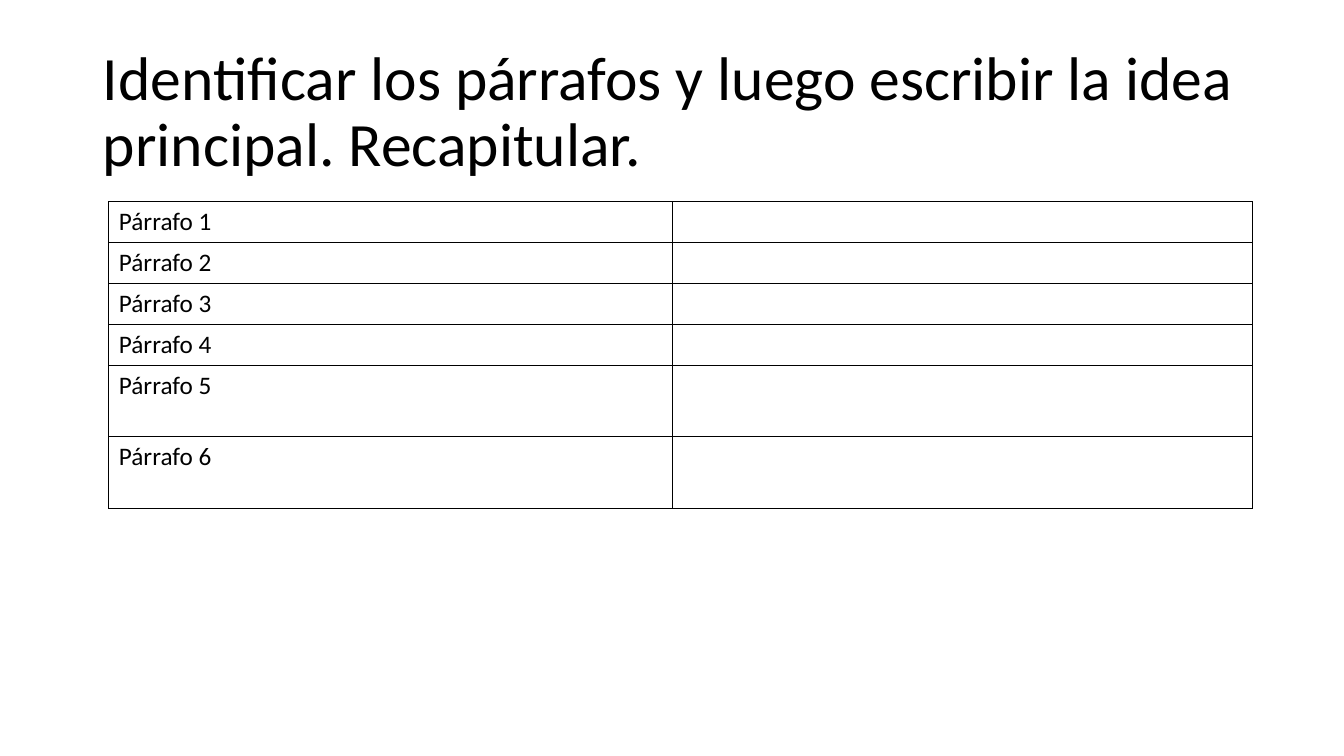
import pptx
import pptx.util
import pptx.dml.color
import pptx.enum.text
import pptx.oxml.ns
from lxml import etree
from pptx.util import Inches, Pt

COLORS = {"ink": "000000", "paper": "FFFFFF"}
FONT = "Calibri"
TITLE = "Identificar los párrafos y luego escribir la idea principal. Recapitular."
COLUMN_WIDTHS = [5.59, 5.75]
ROW_HEIGHTS = [0.405] * 4 + [0.71] * 2


def rgb(name):
    return pptx.dml.color.RGBColor.from_string(COLORS[name])


def style_paragraph(para, size):
    para.font.name = FONT
    para.font.size = Pt(size)
    para.font.color.rgb = rgb("ink")


def add_title(page, text):
    title = page.shapes.title
    title.left, title.top = Inches(0.92), Inches(0.4)
    title.width, title.height = Inches(11.5), Inches(1.45)
    frame = title.text_frame
    frame.text = text
    frame.word_wrap = True
    frame.auto_size = pptx.enum.text.MSO_AUTO_SIZE.NONE
    frame.vertical_anchor = pptx.enum.text.MSO_ANCHOR.MIDDLE
    para = frame.paragraphs[0]
    para.alignment = pptx.enum.text.PP_ALIGN.LEFT
    para.line_spacing = 0.9
    style_paragraph(para, 44)


def add_borders(cell):
    qn = pptx.oxml.ns.qn
    properties = cell._tc.get_or_add_tcPr()
    for side in ("a:lnL", "a:lnR", "a:lnT", "a:lnB"):
        line = etree.SubElement(properties, qn(side), w=str(Pt(1)))
        fill = etree.SubElement(line, qn("a:solidFill"))
        etree.SubElement(fill, qn("a:srgbClr"), val=COLORS["ink"])


def add_paragraph_table(page):
    frame = page.shapes.add_table(
        len(ROW_HEIGHTS), len(COLUMN_WIDTHS), Inches(1.08), Inches(2),
        Inches(sum(COLUMN_WIDTHS)), Inches(sum(ROW_HEIGHTS)))
    table = frame.table
    table.first_row = False
    table.horz_banding = False
    for column, width in zip(table.columns, COLUMN_WIDTHS):
        column.width = Inches(width)
    for number, (row, height) in enumerate(zip(table.rows, ROW_HEIGHTS), 1):
        row.height = Inches(height)
        row.cells[0].text = f"Párrafo {number}"
        for cell in row.cells:
            style_paragraph(cell.text_frame.paragraphs[0], 18)
            # Borders come before the fill in the cell properties
            add_borders(cell)
            cell.fill.solid()
            cell.fill.fore_color.rgb = rgb("paper")


def main():
    deck = pptx.Presentation()
    deck.slide_width, deck.slide_height = Inches(13.33), Inches(7.5)
    # Title Only layout
    page = deck.slides.add_slide(deck.slide_layouts[5])
    add_title(page, TITLE)
    add_paragraph_table(page)
    deck.save("out.pptx")


if __name__ == "__main__":
    main()
